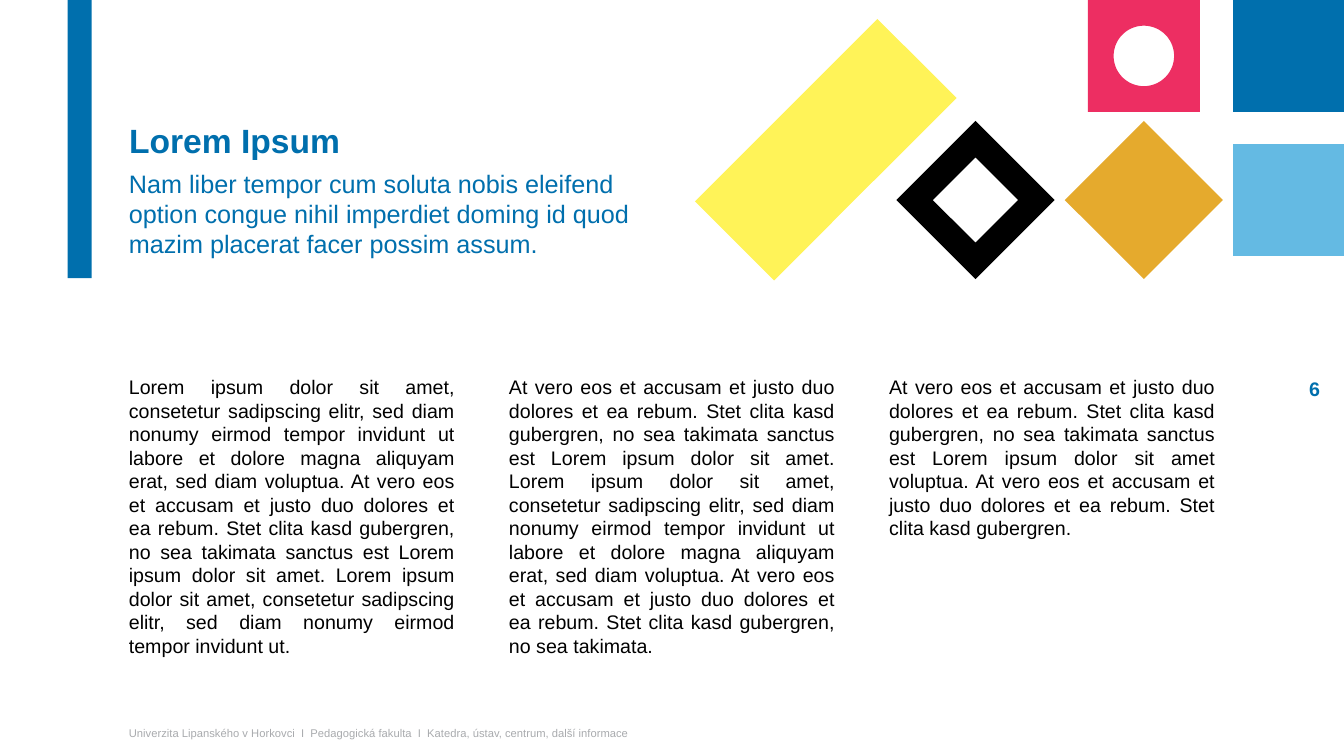
import math

from pptx import Presentation
from pptx import util as u
from pptx.dml.color import RGBColor
from pptx.enum import shapes, text

BLUE = RGBColor(0x00, 0x6F, 0xAD)
LIGHT_BLUE = RGBColor(0x64, 0xBA, 0xE3)
OCHRE = RGBColor(0xE5, 0xAA, 0x2D)
PINK = RGBColor(0xED, 0x2E, 0x62)
YELLOW = RGBColor(0xFF, 0xF3, 0x58)
BLACK = RGBColor(0x00, 0x00, 0x00)
GREY = RGBColor(0xA9, 0xAB, 0xAE)

TILE = 1.11
ROWS = (0, 1.43)
FRAME_LEFT, MIDDLE_LEFT, RIGHT_LEFT = 9.12, 10.79, 12.23
MARGIN = 1.18
COLUMN_WIDTH, COLUMN_GAP, COLUMN_TOP = 3.43, 0.34, 3.67

presentation = Presentation()
presentation.slide_width = u.Inches(13.33)
presentation.slide_height = u.Inches(7.5)
slide = presentation.slides.add_slide(presentation.slide_layouts[5])


def paint(shape, color, rotation=0):
    """Give a shape a plain fill without line or shadow, and turn it."""
    shape.shadow.inherit = False
    shape.fill.solid()
    shape.fill.fore_color.rgb = color
    shape.line.fill.background()
    shape.rotation = rotation


def write(box, words, size, color, bold=False, align=text.PP_ALIGN.LEFT,
          anchor=text.MSO_ANCHOR.TOP, before=0, spacing=1.0):
    """Fill a text box or placeholder with one formatted paragraph."""
    frame = box.text_frame
    frame.text = words
    frame.word_wrap = True
    frame.auto_size = text.MSO_AUTO_SIZE.NONE
    frame.vertical_anchor = anchor
    paragraph = frame.paragraphs[0]
    paragraph.alignment = align
    paragraph.space_before = u.Pt(before)
    paragraph.line_spacing = spacing
    paragraph.font.name = "Arial"
    paragraph.font.size = u.Pt(size)
    paragraph.font.bold = bold
    paragraph.font.color.rgb = color


# Decorative tiles: preset, left, top, width, height, colour, rotation
RECTANGLE = shapes.MSO_SHAPE.RECTANGLE
tiles = [
    (RECTANGLE, RIGHT_LEFT, ROWS[0], TILE, TILE, BLUE, 0),
    (RECTANGLE, RIGHT_LEFT, ROWS[1], TILE, TILE, LIGHT_BLUE, 0),
    (RECTANGLE, MIDDLE_LEFT, ROWS[1], TILE, TILE, OCHRE, 45),
    (shapes.MSO_SHAPE.FRAME, FRAME_LEFT, ROWS[1], TILE, TILE, BLACK, 45),
    (RECTANGLE, 6.91, 0.93, 2.56, TILE, YELLOW, 315),
    (RECTANGLE, 0.67, 0, 0.24, 2.76, BLUE, 0),
]
for preset, left, top, width, height, color, rotation in tiles:
    tile = slide.shapes.add_shape(
        preset, *(u.Inches(length) for length in (left, top, width, height)))
    paint(tile, color, rotation)
    if preset == shapes.MSO_SHAPE.FRAME:
        tile.adjustments[0] = 0.23

# Pink tile with a round hole
left, side, radius, steps = u.Inches(MIDDLE_LEFT), u.Inches(TILE), u.Inches(0.3), 90
circle = [(left + side / 2 + radius * math.cos(math.tau * step / steps),
           side / 2 + radius * math.sin(math.tau * step / steps))
          for step in range(steps)]
builder = slide.shapes.build_freeform(left, 0)
builder.add_line_segments([(left, side), (left + side, side), (left + side, 0)])
builder.move_to(*circle[0])
builder.add_line_segments(circle[1:])
paint(builder.convert_to_shape(), PINK)

# Heading
title = slide.shapes.title
title.left, title.top = u.Inches(MARGIN), u.Inches(1.18)
title.width, title.height = u.Inches(5.12), u.Inches(0.46)
write(title, "Lorem Ipsum", 24, BLUE, bold=True, spacing=0.9)

subtitle = slide.shapes.add_textbox(
    u.Inches(MARGIN), u.Inches(1.62), u.Inches(5.49), u.Inches(1.01))
write(subtitle,
      "Nam liber tempor cum soluta nobis eleifend option congue nihil "
      "imperdiet doming id quod mazim placerat facer possim assum.",
      18, BLUE, before=3)

# Body columns
columns = [
    ("Lorem ipsum dolor sit amet, consetetur sadipscing elitr, sed diam "
     "nonumy eirmod tempor invidunt ut labore et dolore magna aliquyam erat, "
     "sed diam voluptua. At vero eos et accusam et justo duo dolores et ea "
     "rebum. Stet clita kasd gubergren, no sea takimata sanctus est Lorem "
     "ipsum dolor sit amet. Lorem ipsum dolor sit amet, consetetur "
     "sadipscing elitr, sed diam nonumy eirmod tempor invidunt ut.", 2.93),
    ("At vero eos et accusam et justo duo dolores et ea rebum. Stet clita "
     "kasd gubergren, no sea takimata sanctus est Lorem ipsum dolor sit "
     "amet. Lorem ipsum dolor sit amet, consetetur sadipscing elitr, sed "
     "diam nonumy eirmod tempor invidunt ut labore et dolore magna aliquyam "
     "erat, sed diam voluptua. At vero eos et accusam et justo duo dolores "
     "et ea rebum. Stet clita kasd gubergren, no sea takimata.", 2.93),
    ("At vero eos et accusam et justo duo dolores et ea rebum. Stet clita "
     "kasd gubergren, no sea takimata sanctus est Lorem ipsum dolor sit amet "
     "voluptua. At vero eos et accusam et justo duo dolores et ea rebum. "
     "Stet clita kasd gubergren.", 1.75),
]
for index, (words, height) in enumerate(columns):
    column = slide.shapes.add_textbox(
        u.Inches(MARGIN + index * (COLUMN_WIDTH + COLUMN_GAP)),
        u.Inches(COLUMN_TOP), u.Inches(COLUMN_WIDTH), u.Inches(height))
    write(column, words, 14, BLACK, align=text.PP_ALIGN.JUSTIFY, before=3)

# Footer and page number
footer = slide.shapes.add_textbox(
    u.Inches(MARGIN), u.Inches(7.15), u.Inches(5.49), u.Inches(0.24))
write(footer,
      "Univerzita Lipanského v Horkovci  I  Pedagogická fakulta  I  "
      "Katedra, ústav, centrum, další informace",
      8, GREY, anchor=text.MSO_ANCHOR.MIDDLE)

page_number = slide.shapes.add_textbox(
    u.Inches(12.75), u.Inches(3.69), u.Inches(0.44), u.Inches(0.34))
write(page_number, "6", 14, BLUE, bold=True, align=text.PP_ALIGN.RIGHT,
      anchor=text.MSO_ANCHOR.MIDDLE)

presentation.save("out.pptx")
